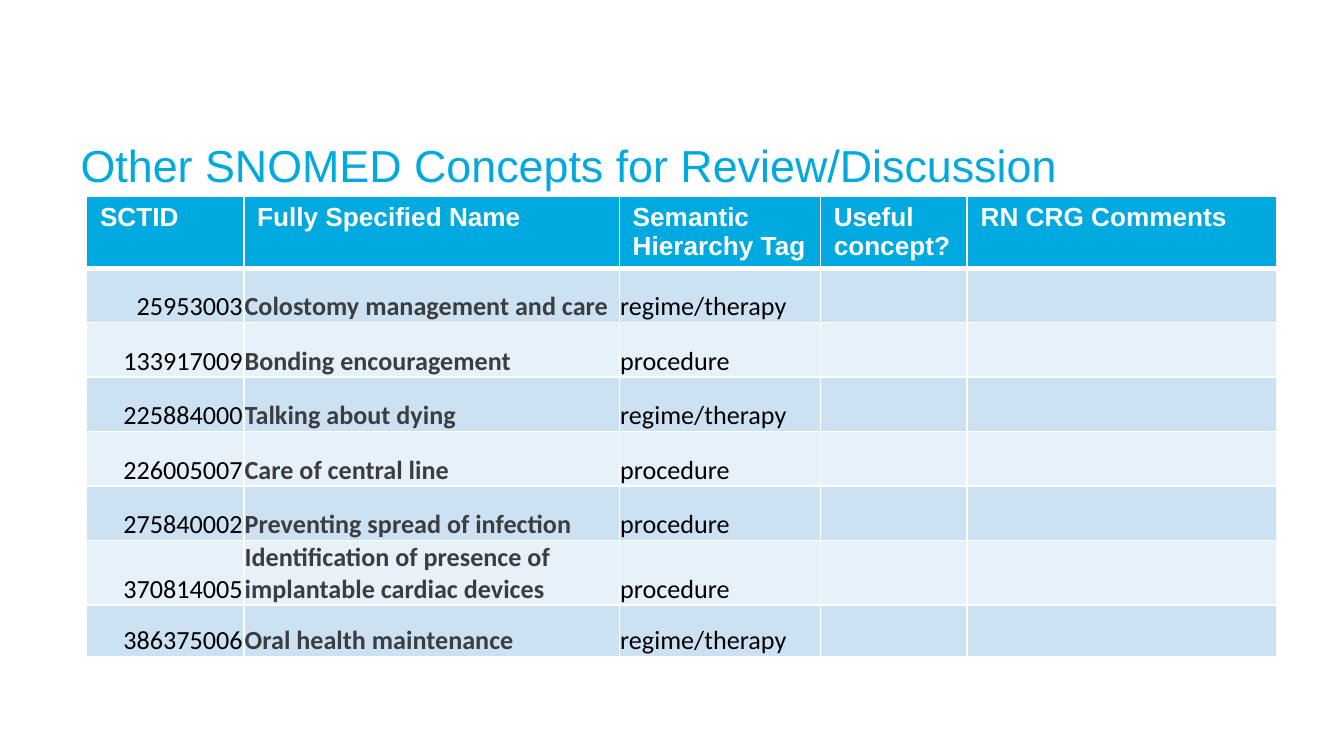
from lxml.etree import SubElement
from pptx import Presentation
from pptx.dml.color import RGBColor
from pptx.enum.text import MSO_ANCHOR as Anchor, MSO_AUTO_SIZE as AutoSize, PP_ALIGN as Align
from pptx.oxml.ns import qn
from pptx.util import Pt

BLUE, WHITE, BLACK, GREY = "00A9E0", "FFFFFF", "000000", "3B3D40"
BANDS = ["CCE2F3", "E7F1F9"]


def write(frame, text, font="Arial", size=14, color=BLACK, bold=False, align=Align.LEFT):
    para = frame.paragraphs[0]
    para.alignment = align
    span = para.add_run()
    span.text = text
    span.font.name = font
    span.font.size = Pt(size)
    span.font.bold = bold
    span.font.color.rgb = RGBColor.from_string(color)


def style_cell(cell, fill, top=1, bottom=1):
    """Draw white borders, then fill the cell."""
    props = cell._tc.get_or_add_tcPr()
    for side, width in (("L", 1), ("R", 1), ("T", top), ("B", bottom)):
        line = SubElement(props, qn(f"a:ln{side}"), w=str(Pt(width)))
        SubElement(SubElement(line, qn("a:solidFill")), qn("a:srgbClr"), val=WHITE)
    cell.fill.solid()
    cell.fill.fore_color.rgb = RGBColor.from_string(fill)


deck = Presentation()
deck.slide_width, deck.slide_height = Pt(720), Pt(405)
page = deck.slides.add_slide(deck.slide_layouts[5])

# Title
title = page.shapes.title
title.left, title.top, title.width, title.height = Pt(36), Pt(65.8), Pt(648), Pt(44.6)
frame = title.text_frame
frame.word_wrap = True
frame.auto_size = AutoSize.NONE
frame.vertical_anchor = Anchor.MIDDLE
frame.margin_left = frame.margin_right = frame.margin_top = frame.margin_bottom = Pt(7.2)
write(frame, "Other SNOMED Concepts for Review/Discussion", size=24, color=BLUE)

# Table content
headers = ["SCTID", "Fully Specified Name", "Semantic Hierarchy Tag",
           "Useful concept?", "RN CRG Comments"]
concepts = [
    ("25953003", "Colostomy management and care", "regime/therapy"),
    ("133917009", "Bonding encouragement", "procedure"),
    ("225884000", "Talking about dying", "regime/therapy"),
    ("226005007", "Care of central line", "procedure"),
    ("275840002", "Preventing spread of infection", "procedure"),
    ("370814005", "Identification of presence of implantable cardiac devices", "procedure"),
    ("386375006", "Oral health maintenance", "regime/therapy"),
]
widths = [84.2, 201.2, 107.7, 78.7, 165.6]
heights = [38.5] + [29.2] * 5 + [34.6, 27.6]
column_formats = [
    {"align": Align.RIGHT},
    {"color": GREY, "bold": True},
    {},
]

# Table grid
table = page.shapes.add_table(len(heights), len(widths), Pt(46.4), Pt(104.9),
                              Pt(sum(widths)), Pt(sum(heights))).table
table.horz_banding = False
for column, width in zip(table.columns, widths):
    column.width = Pt(width)
for row, height in zip(table.rows, heights):
    row.height = Pt(height)

# Header row
for index, text in enumerate(headers):
    cell = table.cell(0, index)
    style_cell(cell, BLUE, bottom=3)
    write(cell.text_frame, text, color=WHITE, bold=True)

# Concept rows, with the last two columns left open for answers
for number, concept in enumerate(concepts, start=1):
    for index in range(len(widths)):
        cell = table.cell(number, index)
        style_cell(cell, BANDS[(number - 1) % 2], top=3 if number == 1 else 1)
        cell.vertical_anchor = Anchor.BOTTOM
        cell.margin_left = cell.margin_right = cell.margin_top = Pt(0.5)
        cell.margin_bottom = Pt(0)
        if index < len(concept):
            write(cell.text_frame, concept[index], font="Calibri", **column_formats[index])

deck.save("out.pptx")
